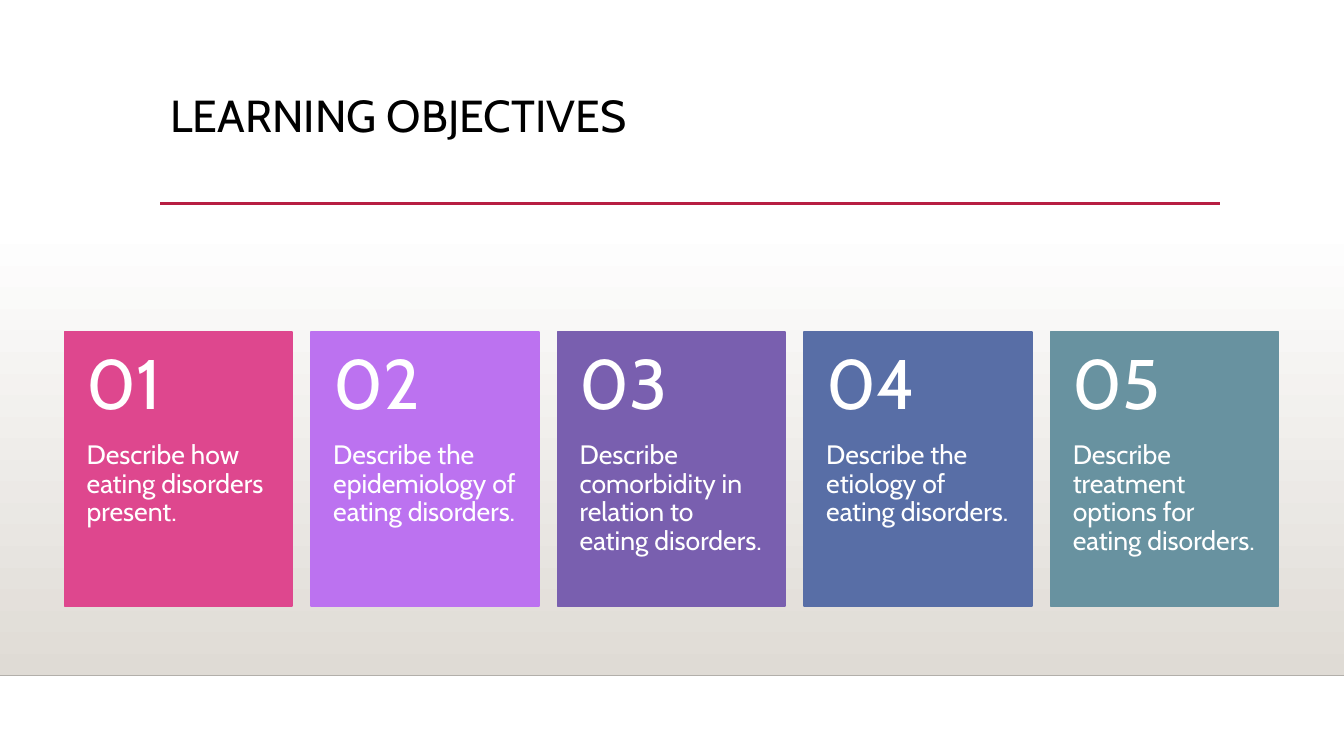
import dataclasses

import lxml.etree
import pptx
import pptx.dml.color
import pptx.enum.dml
import pptx.enum.shapes
import pptx.enum.text
import pptx.oxml.ns
import pptx.util

Inches = pptx.util.Inches
Pt = pptx.util.Pt
RGB = pptx.dml.color.RGBColor.from_string
ANCHOR = pptx.enum.text.MSO_ANCHOR


@dataclasses.dataclass(frozen=True)
class Theme:
    font: str = "Cabin"
    ink: str = "000000"
    paper: str = "FFFFFF"
    floor: str = "DFDBD5"
    floor_edge: str = "B2AFAA"
    accent: str = "B71E42"
    cards: tuple = ("DE478E", "BC72F0", "795FAF", "586EA6", "6892A0")
    title: int = 32
    number: int = 50
    body: int = 19


class Deck:
    """Draws styled elements on the current slide."""

    def __init__(self, theme):
        self.theme = theme
        self.prs = pptx.Presentation()
        self.prs.slide_width, self.prs.slide_height = Inches(13.33), Inches(7.5)
        self.s = self.prs.slides.add_slide(self.prs.slide_layouts[6])

    def rect(self, x, y, w, h):
        sp = self.s.shapes.add_shape(
            pptx.enum.shapes.MSO_SHAPE.RECTANGLE,
            Inches(x), Inches(y), Inches(w), Inches(h))
        sp.shadow.inherit = False
        return sp

    def card(self, x, y, w, h, color):
        sp = self.rect(x, y, w, h)
        sp.fill.solid()
        sp.fill.fore_color.rgb = RGB(color)
        sp.line.color.rgb = RGB(color)
        sp.line.width = Pt(1.25)

    def gradient(self, x, y, w, h, top, bottom):
        sp = self.rect(x, y, w, h)
        sp.line.fill.background()
        sp.fill.gradient()
        sp.fill.gradient_angle = 270
        for stop, color, position in zip(sp.fill.gradient_stops, (top, bottom), (0, 1)):
            stop.color.rgb = RGB(color)
            stop.position = position

    def rule(self, x1, x2, y, color, width):
        line = self.s.shapes.add_connector(
            pptx.enum.shapes.MSO_CONNECTOR.STRAIGHT,
            Inches(x1), Inches(y), Inches(x2), Inches(y))
        line.line.color.rgb = RGB(color)
        line.line.width = Pt(width)
        props = line._element.spPr
        lxml.etree.SubElement(props, pptx.oxml.ns.qn("a:effectLst"))

    def text(self, x, y, w, h, text, size, color, insets, anchor=ANCHOR.TOP):
        tf = self.s.shapes.add_textbox(
            Inches(x), Inches(y), Inches(w), Inches(h)).text_frame
        left, top, right, bottom = map(Inches, insets)
        frame = {"word_wrap": True, "vertical_anchor": anchor,
                 "margin_left": left, "margin_top": top,
                 "margin_right": right, "margin_bottom": bottom}
        for name, value in frame.items():
            setattr(tf, name, value)
        p = tf.paragraphs[0]
        p.line_spacing = 0.9
        r = p.add_run()
        r.text = text
        for name, value in {"name": self.theme.font, "size": Pt(size)}.items():
            setattr(r.font, name, value)
        r.font.color.rgb = RGB(color)


OBJECTIVES = (
    "Describe how eating disorders present.",
    "Describe the epidemiology of eating disorders.",
    "Describe comorbidity in relation to eating disorders.",
    "Describe the etiology of eating disorders.",
    "Describe treatment options for eating disorders.",
)


def main():
    theme = Theme()
    deck = Deck(theme)
    deck.gradient(0, 2.21, 13.33, 4.49, theme.paper, theme.floor)
    deck.rule(0, 13.33, 6.7, theme.floor_edge, 1)
    deck.rule(1.59, 12.1, 2.02, theme.accent, 2.5)
    deck.text(1.59, 0.88, 10.5, 1.15, "LEARNING OBJECTIVES",
              theme.title, theme.ink, (0.1, 0.05, 0.1, 0.05))

    left, top, width, height, pitch, head = 0.64, 3.29, 2.26, 2.72, 2.445, 1.09
    for i, (objective, color) in enumerate(zip(OBJECTIVES, theme.cards)):
        x = left + i * pitch
        deck.card(x, top, width, height, color)
        deck.text(x, top + head, width, height - head, objective,
                  theme.body, theme.paper, (0.22, 0, 0.22, 0.36))
        deck.text(x, top, width, head, f"{i + 1:02d}", theme.number,
                  theme.paper, (0.22, 0.18, 0.22, 0.18), ANCHOR.MIDDLE)

    deck.prs.save("out.pptx")


if __name__ == "__main__":
    main()
